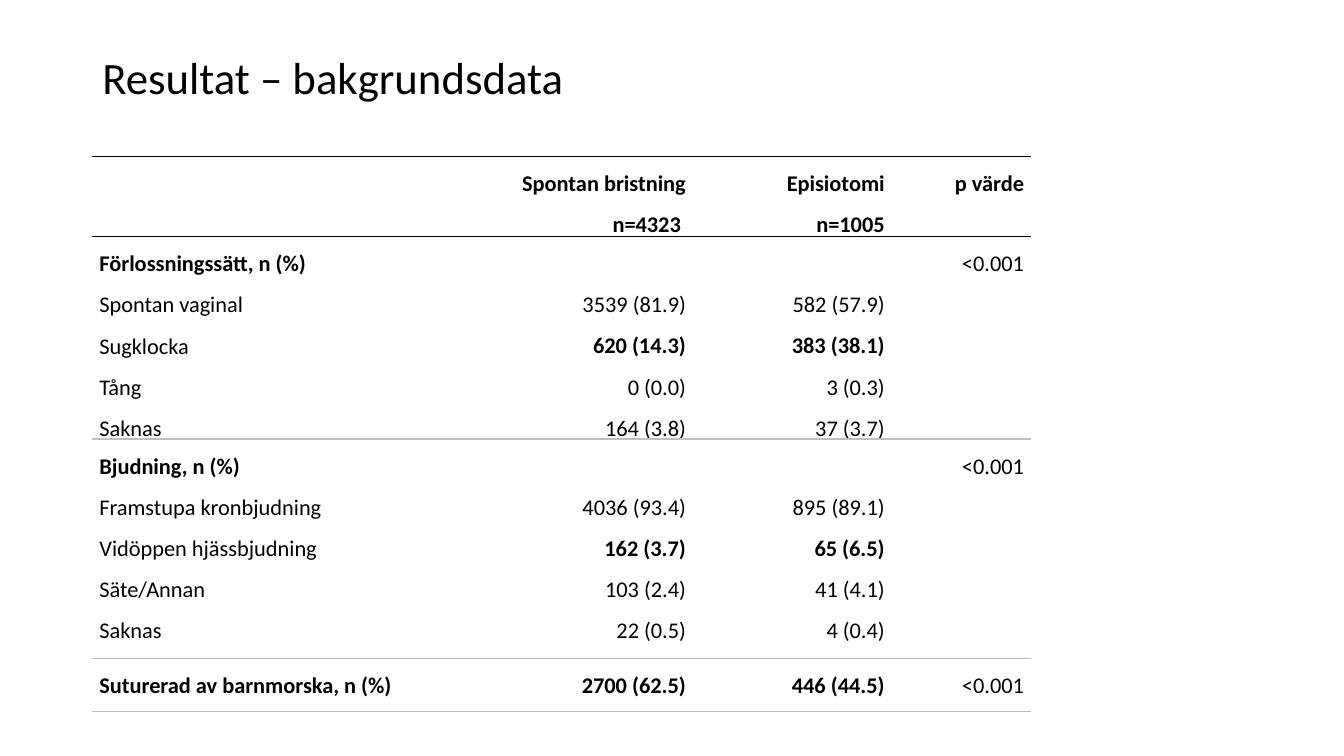
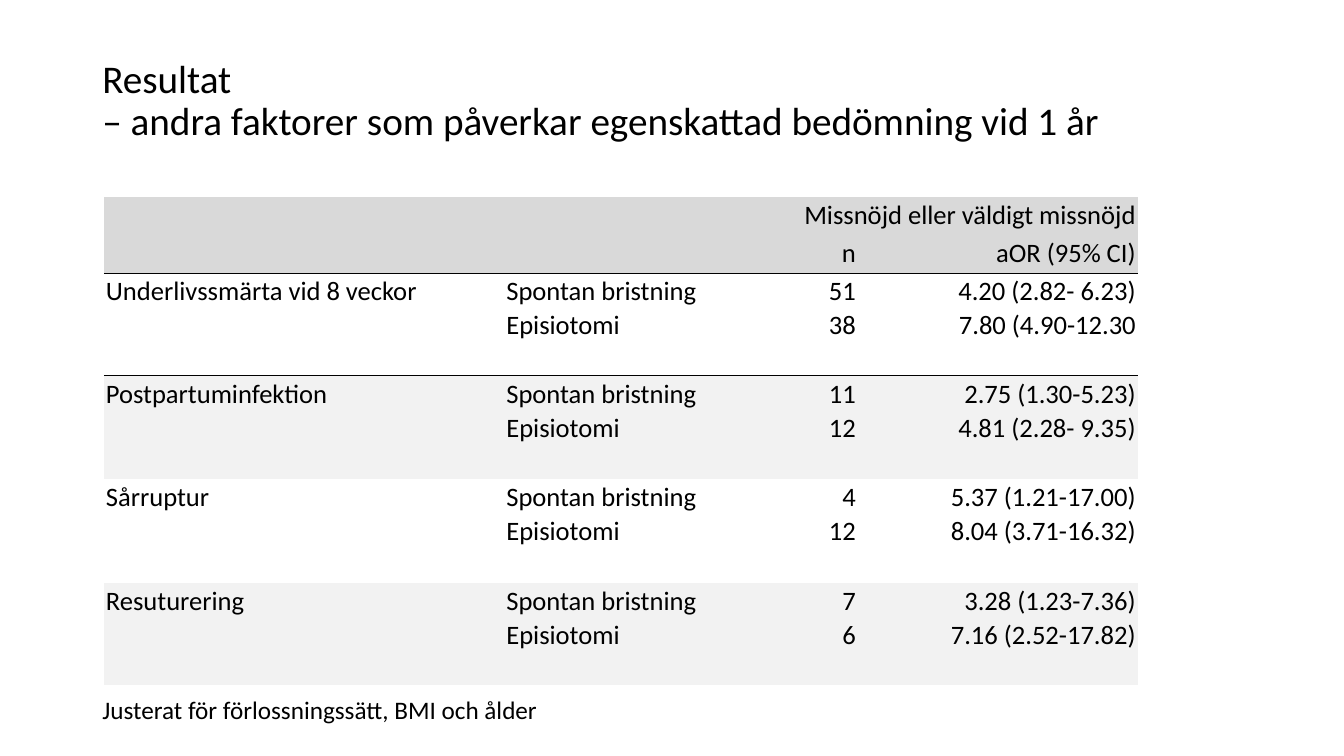
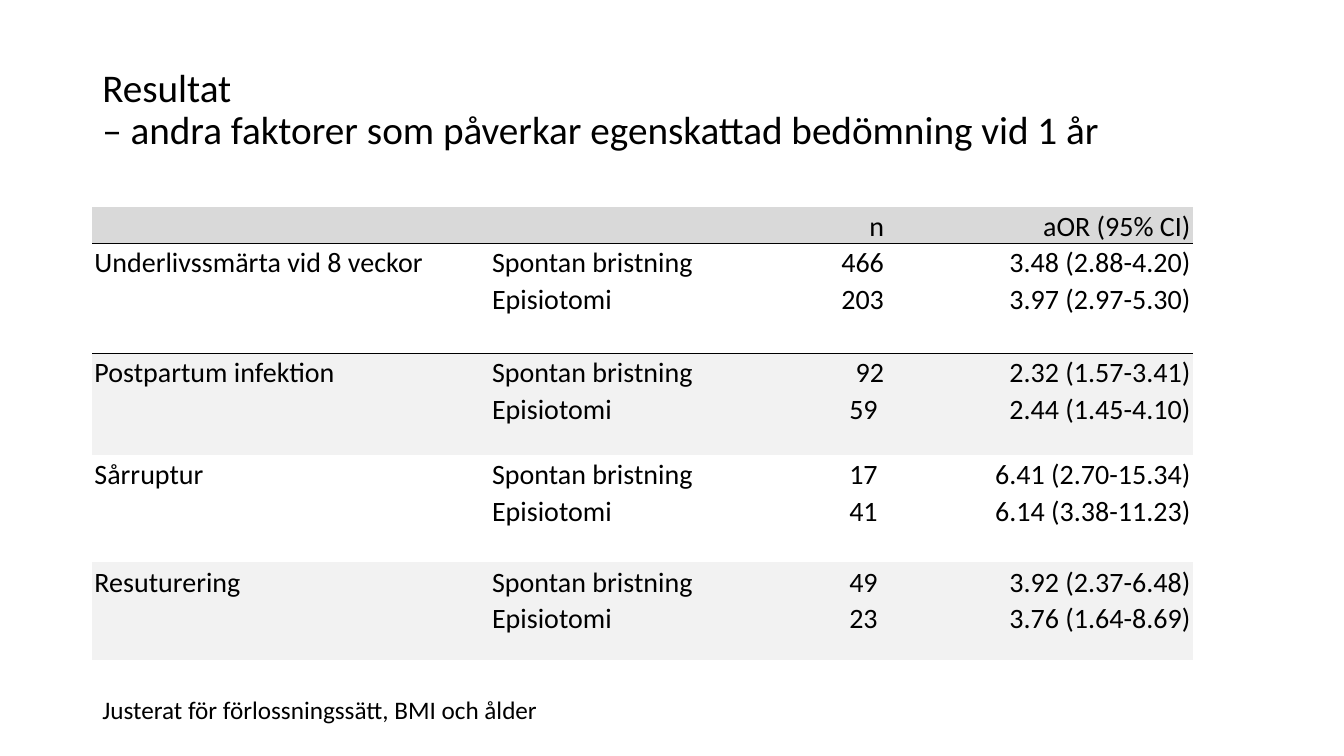
"""Build three result slides on spontaneous tears and episiotomy."""
from lxml import etree
from pptx import Presentation
from pptx.dml.color import RGBColor
from pptx.enum.text import MSO_ANCHOR, PP_ALIGN
from pptx.oxml.ns import qn
from pptx.util import Pt

FONT = "Calibri"
COLORS = {"text": "000000", "rule": "000000", "soft_rule": "BFBFBF",
          "plain": "FFFFFF", "header": "D9D9D9", "band": "F2F2F2"}
NO_STYLE = "{2D5ABB26-0587-4C30-8999-92F81FD0307C}"
BOLD = "*"
GROUPS = "Spontan bristning\nEpisiotomi"
FACTOR_TITLE = "Resultat\n– andra faktorer som påverkar egenskattad bedömning vid 1 år"
FOOTNOTE = "Justerat för förlossningssätt, BMI och ålder"

BACKGROUND_ROWS = [
    ["", "*Spontan bristning\n*n=4323 ", "*Episiotomi\n*n=1005", "*p värde"],
    ["*Förlossningssätt, n (%)\nSpontan vaginal\nSugklocka\nTång\nSaknas",
     "3539 (81.9)\n*620 (14.3)\n0 (0.0)\n164 (3.8)",
     "582 (57.9)\n*383 (38.1)\n3 (0.3)\n37 (3.7)", "<0.001"],
    ["*Bjudning, n (%)\nFramstupa kronbjudning\nVidöppen hjässbjudning\nSäte/Annan\nSaknas",
     "4036 (93.4)\n*162 (3.7)\n103 (2.4)\n22 (0.5)",
     "895 (89.1)\n*65 (6.5)\n41 (4.1)\n4 (0.4)", "<0.001"],
    ["*Suturerad av barnmorska, n (%)", "*2700 (62.5)", "*446 (44.5)", "<0.001"],
]
DISSATISFIED_ROWS = [
    ["", "", "Missnöjd eller väldigt missnöjd", ""],
    ["", "", "n", "aOR (95% CI)"],
    ["Underlivssmärta vid 8 veckor", GROUPS, "51\n38", "4.20 (2.82- 6.23)\n7.80 (4.90-12.30"],
    ["Postpartuminfektion", GROUPS, "11\n12", "2.75 (1.30-5.23)\n4.81 (2.28- 9.35)"],
    ["Sårruptur", GROUPS, "4\n12", "5.37 (1.21-17.00)\n8.04 (3.71-16.32)"],
    ["Resuturering", GROUPS, "7\n6", "3.28 (1.23-7.36)\n7.16 (2.52-17.82)"],
]
FACTOR_ROWS = [
    ["", "", "n", "aOR (95% CI)"],
    ["Underlivssmärta vid 8 veckor", GROUPS, "466\n203", "3.48 (2.88-4.20)\n3.97 (2.97-5.30)"],
    ["Postpartum infektion", GROUPS, "92\n59 ", "2.32 (1.57-3.41)\n2.44 (1.45-4.10)"],
    ["Sårruptur", GROUPS, "17 \n41 ", "6.41 (2.70-15.34)\n6.14 (3.38-11.23)"],
    ["Resuturering", GROUPS, "49 \n23 ", "3.92 (2.37-6.48)\n3.76 (1.64-8.69)"],
]

SLIDES = [
    {"title": "Resultat – bakgrundsdata", "title_size": 32, "title_box": (66, 43.2, 697, 35),
     "table": {"rows": BACKGROUND_ROWS, "at": (66, 111.6), "size": 16, "spacing": 1.5,
               "cols": (242.5, 186.5, 142, 99.5), "heights": (51, 128, 157, 37.5),
               "margins": (5, 0), "right_from": 1, "fills": ["plain"] * 4,
               "rules": {0: "rule", 1: "rule", 2: "soft_rule", 3: "soft_rule", 4: "soft_rule"},
               "drops": {(r, c): 29.3 for r in (1, 2) for c in (1, 2)}}},
    {"title": FACTOR_TITLE, "title_size": 28, "title_box": (66, 77.8, 790, 28.8), "note": FOOTNOTE,
     "table": {"rows": DISSATISFIED_ROWS, "at": (74.2, 140.4), "size": 19, "spacing": 1.05,
               "cols": (286, 168.5, 84, 200), "heights": (27.4, 27.4, 73, 74, 74, 73.5),
               "margins": (1.5, 0.7), "right_from": 2,
               "fills": ["header", "header", "plain", "band", "plain", "band"],
               "rules": {2: "rule"}, "merges": [(0, 0), (0, 2), (1, 0)]}},
    {"title": FACTOR_TITLE, "title_size": 28, "title_box": (66, 77.8, 842, 35.3), "note": FOOTNOTE,
     "table": {"rows": FACTOR_ROWS, "at": (66, 147.6), "size": 20, "spacing": 1.06,
               "cols": (284, 192.5, 90.5, 219), "heights": (26, 78.5, 73, 76.5, 70),
               "margins": (1.5, 0.7), "right_from": 2,
               "fills": ["header", "plain", "band", "plain", "band"],
               "rules": {1: "rule"}, "merges": [(0, 0)]}},
]


def style(font, size, bold=False):
    font.name, font.size, font.bold = FONT, Pt(size), bold
    font.color.rgb = RGBColor.from_string(COLORS["text"])


def add_text(s, box, text, size, anchor=MSO_ANCHOR.TOP, spacing=1.0):
    tf = s.shapes.add_textbox(*map(Pt, box)).text_frame
    tf.word_wrap = True
    tf.vertical_anchor = anchor
    p = tf.paragraphs[0]
    p.line_spacing = spacing
    for i, line in enumerate(text.split("\n")):
        if i:
            p.add_line_break()
        r = p.add_run()
        r.text = line
        style(r.font, size)


def add_border(cell, tag, color):
    ln = etree.SubElement(cell._tc.get_or_add_tcPr(), qn(tag), w=str(Pt(1)))
    fill = etree.SubElement(ln, qn("a:solidFill"))
    etree.SubElement(fill, qn("a:srgbClr"), val=COLORS[color])


def fill_cell(cell, text, row, col, t):
    side, top = t["margins"]
    cell.margin_left = cell.margin_right = Pt(side)
    cell.margin_top = Pt(top + t.get("drops", {}).get((row, col), 0))
    cell.margin_bottom = 0
    for tag, edge in (("a:lnT", row), ("a:lnB", row + 1)):
        if edge in t["rules"]:
            add_border(cell, tag, t["rules"][edge])
    cell.fill.solid()
    cell.fill.fore_color.rgb = RGBColor.from_string(COLORS[t["fills"][row]])
    tf = cell.text_frame
    for i, line in enumerate(text.split("\n")):
        p = tf.add_paragraph() if i else tf.paragraphs[0]
        p.line_spacing = t["spacing"]
        p.alignment = PP_ALIGN.RIGHT if col >= t["right_from"] else PP_ALIGN.LEFT
        if line:
            r = p.add_run()
            r.text = line.removeprefix(BOLD)
            style(r.font, t["size"], line.startswith(BOLD))
        else:
            style(p.font, t["size"])


def add_result_table(s, t):
    box = (*t["at"], sum(t["cols"]), sum(t["heights"]))
    table = s.shapes.add_table(len(t["rows"]), len(t["cols"]), *map(Pt, box)).table
    table.first_row = table.horz_banding = False
    table._tbl.tblPr.find(qn("a:tableStyleId")).text = NO_STYLE
    for column, width in zip(table.columns, t["cols"]):
        column.width = Pt(width)
    for table_row, height in zip(table.rows, t["heights"]):
        table_row.height = Pt(height)
    for row, texts in enumerate(t["rows"]):
        for col, text in enumerate(texts):
            fill_cell(table.cell(row, col), text, row, col, t)
    for row, col in t.get("merges", []):
        table.cell(row, col).merge(table.cell(row, col + 1))


def main():
    prs = Presentation()
    prs.slide_width, prs.slide_height = Pt(960), Pt(540)
    for content in SLIDES:
        s = prs.slides.add_slide(prs.slide_layouts[6])
        add_text(s, content["title_box"], content["title"], content["title_size"],
                 MSO_ANCHOR.BOTTOM, 0.9)
        add_result_table(s, content["table"])
        if "note" in content:
            add_text(s, (66, 492.5, 553, 29), content["note"], 18)
    prs.save("out.pptx")


if __name__ == "__main__":
    main()
